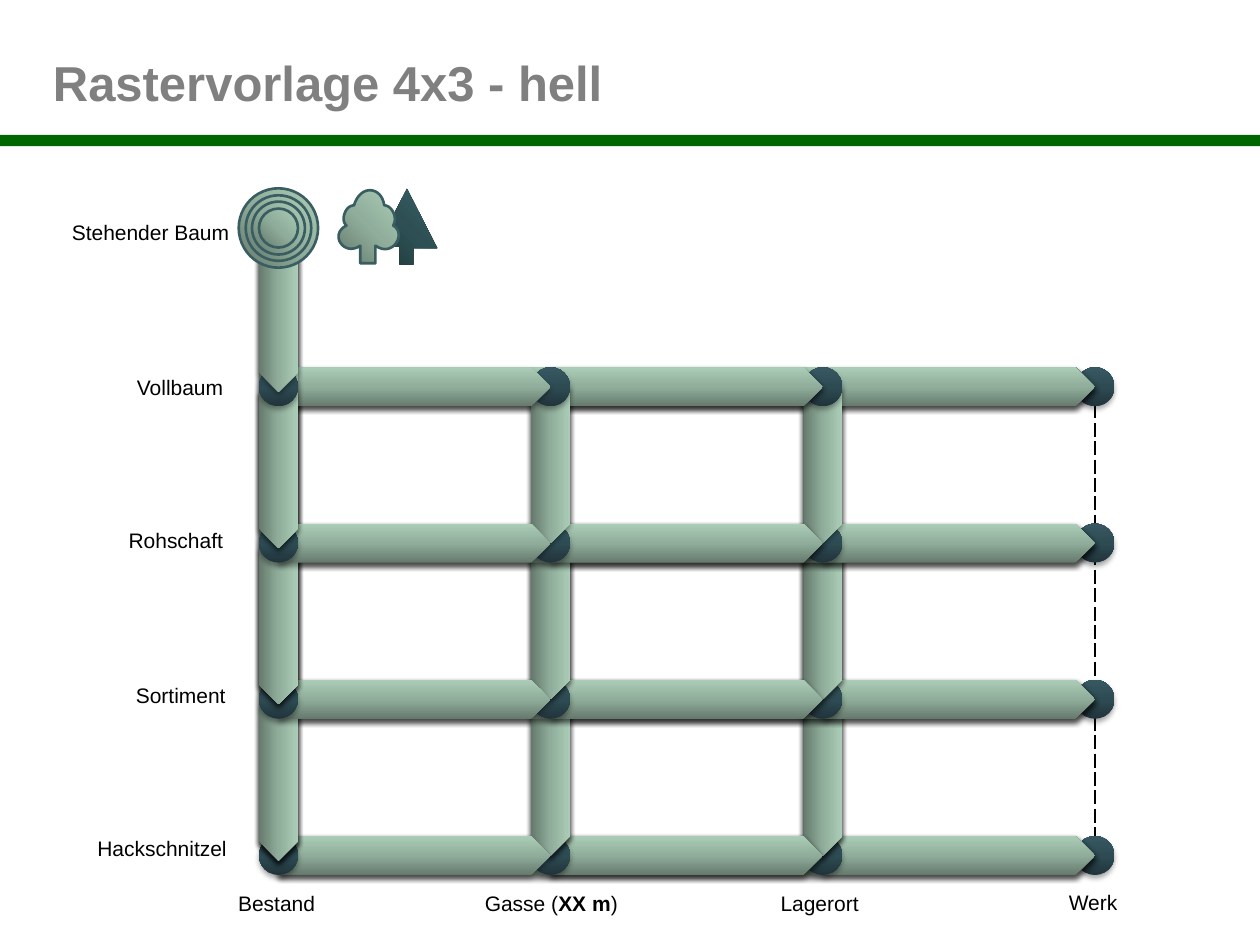
from copy import deepcopy

from lxml import etree
from pptx import Presentation
from pptx.dml.color import RGBColor
from pptx.enum.shapes import MSO_SHAPE as SHAPE
from pptx.enum.text import MSO_ANCHOR as ANCHOR, MSO_AUTO_SIZE as AUTO, PP_ALIGN as ALIGN
from pptx.oxml.ns import qn
from pptx.util import Inches, Pt

BLACK = RGBColor(0x00, 0x00, 0x00)
GREY = RGBColor(0x80, 0x80, 0x80)
BAR_GREEN = RGBColor(0x00, 0x66, 0x00)
OUTLINE = RGBColor(0x39, 0x5D, 0x61)
SAGE = [RGBColor.from_string(c) for c in ("657A6D", "90AD9B", "ABCDB7")]
SLATE = [RGBColor.from_string(c) for c in ("21343B", "2E4B53", "375863")]
PINE = [RGBColor.from_string(c) for c in ("20393B", "2E5054", "365F64")]

COL_W, ROW_H = 2.16, 1.24
COLS, ROWS = 4, 4
BAND = 0.31  # thickness of arrows and diameter of nodes


def style(sp, colors, angle, line=None):
    """Three-stop gradient (counter-clockwise angle) and optional outline."""
    sp.shadow.inherit = False
    sp.fill.gradient()
    sp.fill.gradient_angle = angle
    first, last = sp.fill.gradient_stops
    first.color.rgb, last.color.rgb = colors[1], colors[2]
    stops = sp._element.spPr.find(".//" + qn("a:gsLst"))
    middle = deepcopy(stops[0])
    middle.set("pos", "50000")
    stops.insert(1, middle)
    first.color.rgb = colors[0]
    if line is None:
        sp.line.fill.background()
    else:
        sp.line.color.rgb = line
        sp.line.width = Pt(1.5)


def add_shadow(sp):
    effects = sp._element.spPr.find(qn("a:effectLst"))
    shadow = etree.SubElement(effects, qn("a:outerShdw"), blurRad=str(Pt(3.1)),
                              dist=str(Pt(1.8)), dir="5400000", rotWithShape="0")
    color = etree.SubElement(shadow, qn("a:srgbClr"), val=str(BLACK))
    etree.SubElement(color, qn("a:alpha"), val="35000")


def add_centred(slide, kind, x, y, w, h):
    return slide.shapes.add_shape(kind, Inches(x - w / 2), Inches(y - h / 2),
                                  Inches(w), Inches(h))


def add_text(slide, box, runs, size, color, align=ALIGN.LEFT, wrap=True):
    """Text box from (text, bold) runs."""
    sp = slide.shapes.add_textbox(*map(Inches, box))
    tf = sp.text_frame
    tf.word_wrap = wrap
    p = tf.paragraphs[0]
    p.alignment = align
    for text, bold in runs:
        r = p.add_run()
        r.text = text
        r.font.name, r.font.size, r.font.bold = "Arial", Pt(size), bold
        r.font.color.rgb = color
    return tf


def add_header(slide):
    bar = slide.shapes.add_shape(SHAPE.RECTANGLE, 0, Inches(1.07), Inches(10.04), Inches(0.09))
    bar.shadow.inherit = False
    bar.fill.solid()
    bar.fill.fore_color.rgb = BAR_GREEN
    bar.line.fill.background()
    tf = add_text(slide, (0.42, 0.44, 8.28, 0.42), [("Rastervorlage 4x3 - hell", True)], 28, GREY)
    tf.margin_left = 0
    tf.vertical_anchor = ANCHOR.MIDDLE


def set_borders(cell, shown):
    """Dashed black lines on the sides named in shown, none elsewhere."""
    tc_pr = cell._tc.get_or_add_tcPr()
    for i, side in enumerate("LRTB"):
        ln = etree.Element(qn("a:ln" + side), w=str(Pt(1)))
        tc_pr.insert(i, ln)
        if side in shown:
            fill = etree.SubElement(ln, qn("a:solidFill"))
            etree.SubElement(fill, qn("a:srgbClr"), val=str(BLACK))
            etree.SubElement(ln, qn("a:prstDash"), val="dash")
        else:
            etree.SubElement(ln, qn("a:noFill"))


def add_grid_table(slide, left, top):
    n_rows, n_cols = ROWS, COLS - 1
    table = slide.shapes.add_table(n_rows, n_cols, Inches(left), Inches(top),
                                   Inches(COL_W * n_cols), Inches(ROW_H * n_rows)).table
    table.first_row = table.horz_banding = False
    for r in range(n_rows):
        for c in range(n_cols):
            cell = table.cell(r, c)
            cell.fill.background()
            set_borders(cell, "LRTB" if r else "LB" if c == 0 else "B")


def add_node(slide, x, y):
    node = add_centred(slide, SHAPE.OVAL, x, y, BAND, BAND)
    style(node, SLATE, 90)
    add_shadow(node)


def add_arrow(slide, tip_x, tip_y, length, down=False):
    """Band arrow whose tip lies at the given point."""
    x, y = (tip_x, tip_y - length / 2) if down else (tip_x - length / 2, tip_y)
    arrow = add_centred(slide, SHAPE.PENTAGON, x, y, length, BAND)
    arrow.rotation = 90 if down else 0
    style(arrow, SAGE, 90)
    add_shadow(arrow)


def add_process_grid(slide, left, top):
    """Nodes with every arrow leading to them, from the far diagonal to the near one."""
    def xy(row, col):
        return left + COL_W * col, top + ROW_H * (row + 1)

    def arrows_right(row, col):
        for steps in range(col, 0, -1):
            add_arrow(slide, *xy(row, col), COL_W * steps)

    def arrows_down(row, col):
        x, y = xy(row, col)
        # the first column also starts from the standing tree, and sits lower
        most, drop = (row + 1, 0.04) if col == 0 else (row, 0)
        for steps in range(most, 0, -1):
            add_arrow(slide, x, y + drop, ROW_H * steps, down=True)

    for diagonal in range(ROWS + COLS - 2, -1, -1):
        targets = [(r, diagonal - r) for r in range(ROWS) if 0 <= diagonal - r < COLS]
        for row, col in targets:
            add_node(slide, *xy(row, col))
        if targets[0][0] == 0:
            arrows_right(*targets[0])
        for row, col in targets:
            if col < COLS - 1:
                arrows_down(row, col)
        for row, col in targets:
            if row > 0:
                arrows_right(row, col)


def add_rings(slide, x, y):
    for size in (0.63, 0.52, 0.42, 0.31):
        style(add_centred(slide, SHAPE.OVAL, x, y, size, size), SAGE, 45, OUTLINE)


def curve(p0, p1, p2, p3, steps=16):
    """Points along a cubic curve, without its start."""
    ts = [i / steps for i in range(1, steps + 1)]
    return [tuple((1 - t) ** 3 * a + 3 * (1 - t) ** 2 * t * b + 3 * (1 - t) * t * t * c + t ** 3 * d
                  for a, b, c, d in zip(p0, p1, p2, p3)) for t in ts]


def add_outline(slide, left, top, points):
    emu = [(Inches(left + x), Inches(top + y)) for x, y in points]
    builder = slide.shapes.build_freeform(*emu[0])
    builder.add_line_segments(emu[1:], close=True)
    return builder.convert_to_shape()


def add_trees(slide, left, top):
    conifer = [(0.67, 0.64), (0.67, 0.51), (0.86, 0.51), (0.62, 0.04),
               (0.38, 0.5), (0.56, 0.5), (0.56, 0.64)]
    style(add_outline(slide, left, top, conifer), PINE, 45)
    leafy = [(0.25, 0.63), (0.37, 0.63), (0.37, 0.49)]
    crown = [((0.51, 0.59), (0.62, 0.39), (0.51, 0.33)),
             ((0.55, 0.27), (0.5, 0.17), (0.44, 0.17)),
             ((0.42, 0.02), (0.25, 0), (0.2, 0.17)),
             ((0.13, 0.17), (0.09, 0.29), (0.14, 0.33)),
             ((0, 0.4), (0.12, 0.58), (0.25, 0.49))]
    for controls in crown:
        leafy += curve(leafy[-1], *controls)
    style(add_outline(slide, left, top, leafy), SAGE, 45, OUTLINE)


def add_labels(slide):
    stages = [("Stehender Baum", 0.46, 1.69, 1.46), ("Vollbaum", 0.98, 2.92, 0.89),
              ("Rohschaft", 0.91, 4.14, 0.96), ("Sortiment", 0.97, 5.37, 0.92),
              ("Hackschnitzel", 0.66, 6.58, 1.24)]
    places = [([("Bestand", False)], 1.7, 7.02, 0.99),
              ([("Gasse (", False), ("XX m", True), (")", False)], 3.57, 7.02, 1.61),
              ([("Lagerort", False)], 6.01, 7.02, 0.99),
              ([("Werk", False)], 7.97, 7.01, 1.41)]
    labels = [([(text, False)], box, ALIGN.RIGHT, False) for text, *box in stages]
    labels += [(runs, box, ALIGN.CENTER, True) for runs, *box in places]
    for runs, box, align, wrap in labels:
        tf = add_text(slide, (*box, 0.3), runs, 12, BLACK, align, wrap)
        tf.auto_size = AUTO.SHAPE_TO_FIT_TEXT


def main():
    prs = Presentation()
    prs.slide_width, prs.slide_height = Inches(10), Inches(7.5)
    slide = prs.slides.add_slide(prs.slide_layouts[6])
    add_header(slide)
    add_grid_table(slide, 2.21, 1.83)
    add_labels(slide)
    add_trees(slide, 2.61, 1.46)
    add_process_grid(slide, 2.21, 1.83)
    add_rings(slide, 2.21, 1.81)
    prs.save("out.pptx")


if __name__ == "__main__":
    main()
